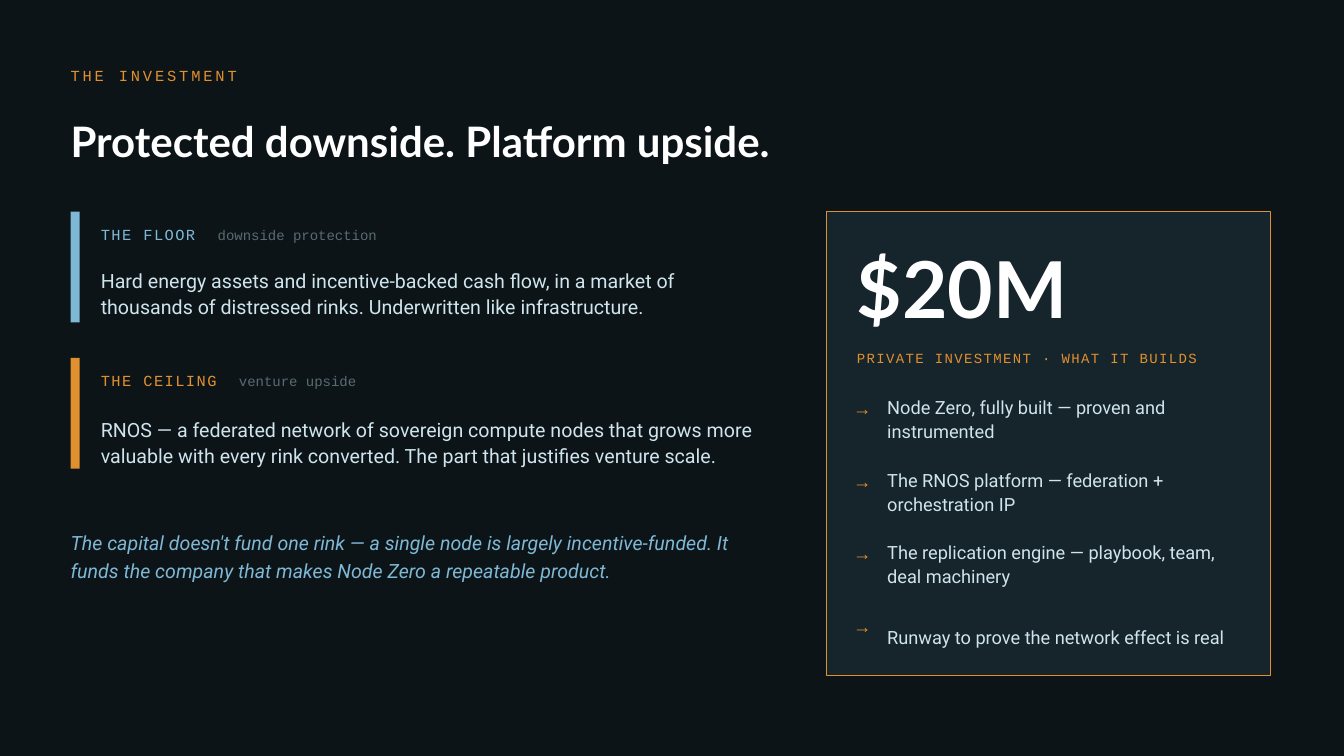
from dataclasses import dataclass

from lxml import etree
from pptx import Presentation
from pptx.dml.color import RGBColor
from pptx.enum.shapes import MSO_SHAPE
from pptx.enum.text import MSO_ANCHOR
from pptx.oxml.ns import qn
from pptx.util import Inches, Pt

RECT = MSO_SHAPE.RECTANGLE
MIDDLE = MSO_ANCHOR.MIDDLE


@dataclass(frozen=True)
class Style:
    """Describe the look of a run of text."""
    font: str
    size: int
    color: str
    bold: bool = False
    italic: bool = False
    track: int = 0
    lead: int = 0


class Theme:
    """Hold the colours and text styles of the slide."""
    back = "0C1418"
    panel = "16242C"
    amber = "E0902F"
    blue = "7FB8D4"
    white = "FFFFFF"
    pale = "CFE4EC"
    mono = "Courier New"
    head = "Lato"
    sans = "Roboto"
    label = Style(mono, 11, amber, track=2)
    title = Style(head, 30, white, bold=True)
    floor = Style(mono, 11, blue, track=1)
    ceiling = Style(mono, 11, amber, track=1)
    aside = Style(mono, 10, "5A6B72")
    body = Style(sans, 14, pale, lead=19)
    close = Style(sans, 14, blue, italic=True, lead=20)
    amount = Style(head, 56, white, bold=True)
    caption = Style(mono, 10, amber, track=1)
    arrow = Style(mono, 13, amber)
    item = Style(sans, 13, pale, lead=17)


def add_text(slide, left, top, width, height, *parts, tab=0):
    """Add a middle-anchored line of styled parts, with an optional tab stop."""
    box = slide.shapes.add_textbox(
        Inches(left), Inches(top), Inches(width), Inches(height))
    frame = box.text_frame
    frame.word_wrap = True
    frame.vertical_anchor = MIDDLE
    frame.margin_left = frame.margin_right = 0
    frame.margin_top = frame.margin_bottom = 0
    para = frame.paragraphs[0]
    if parts[0][1].lead:
        para.line_spacing = Pt(parts[0][1].lead)
    if tab:
        tabs = etree.SubElement(para._p.get_or_add_pPr(), qn("a:tabLst"))
        etree.SubElement(tabs, qn("a:tab"), pos=str(Inches(tab)), algn="l")
    for text, style in parts:
        run = para.add_run()
        run.text = text
        font = run.font
        font.name = style.font
        font.size = Pt(style.size)
        font.bold = style.bold
        font.italic = style.italic
        font.color.rgb = RGBColor.from_string(style.color)
        if style.track:
            run._r.get_or_add_rPr().set("spc", str(style.track * 100))


def add_rect(slide, left, top, width, height, fill, line=None):
    """Add a flat rectangle, outlined if a line colour is given."""
    rect = slide.shapes.add_shape(
        RECT, Inches(left), Inches(top), Inches(width), Inches(height))
    rect.shadow.inherit = False
    rect.fill.solid()
    rect.fill.fore_color.rgb = RGBColor.from_string(fill)
    if line:
        rect.line.color.rgb = RGBColor.from_string(line)
        rect.line.width = Pt(1)
    else:
        rect.line.fill.background()


def add_header(slide, left, top):
    """Add the section label and the title."""
    add_text(slide, left, top, 5, 0.3, ("THE INVESTMENT", Theme.label))
    add_text(slide, left, top + 0.4, 8, 0.8,
             ("Protected downside. Platform upside.", Theme.title))


def add_case(slide, left, top, style, name, aside, tab, body, height):
    """Add one side of the case: a bar, a heading and a statement."""
    add_rect(slide, left, top, 0.09, 1.1, style.color)
    add_text(slide, left + 0.3, top + 0.05, 6.5, 0.35,
             (name + "\t", style), (aside, Theme.aside), tab=tab)
    add_text(slide, left + 0.3, top + 0.4, 6.6, height, (body, Theme.body))


def add_ask(slide, left, top, width, height, items):
    """Add the panel with the amount and what it builds."""
    add_rect(slide, left, top, width, height, Theme.panel, Theme.amber)
    inner = left + 0.3
    add_text(slide, inner, top + 0.25, 3.8, 1, ("$20M", Theme.amount))
    add_text(slide, inner, top + 1.3, 3.9, 0.3,
             ("PRIVATE INVESTMENT · WHAT IT BUILDS", Theme.caption))
    for i, text in enumerate(items):
        row = top + 1.75 + i * 0.72
        add_text(slide, inner, row, 0.3, 0.4, ("→", Theme.arrow))
        add_text(slide, inner + 0.3, row, 3.6, 0.6, (text, Theme.item))


def main():
    """Build the slide and save it."""
    deck = Presentation()
    deck.slide_width = Inches(13.33)
    deck.slide_height = Inches(7.5)
    slide = deck.slides.add_slide(deck.slide_layouts[6])
    fill = slide.background.fill
    fill.solid()
    fill.fore_color.rgb = RGBColor.from_string(Theme.back)
    left = 0.7
    add_header(slide, left, 0.6)
    add_case(slide, left, 2.1, Theme.floor, "THE FLOOR",
             "downside protection", 1.16,
             "Hard energy assets and incentive-backed cash flow, in a market "
             "of thousands of distressed rinks. Underwritten like "
             "infrastructure.", 0.8)
    add_case(slide, left, 3.55, Theme.ceiling, "THE CEILING",
             "venture upside", 1.37,
             "RNOS — a federated network of sovereign compute nodes that "
             "grows more valuable with every rink converted. The part that "
             "justifies venture scale.", 0.85)
    add_text(slide, left, 5, 7, 1, (
        "The capital doesn't fund one rink — a single node is largely "
        "incentive-funded. It funds the company that makes Node Zero a "
        "repeatable product.", Theme.close))
    add_ask(slide, 8.2, 2.1, 4.4, 4.6, [
        "Node Zero, fully built — proven and instrumented",
        "The RNOS platform — federation + orchestration IP",
        "The replication engine — playbook, team, deal machinery",
        "Runway to prove the network effect is real",
    ])
    deck.save("out.pptx")


if __name__ == "__main__":
    main()
